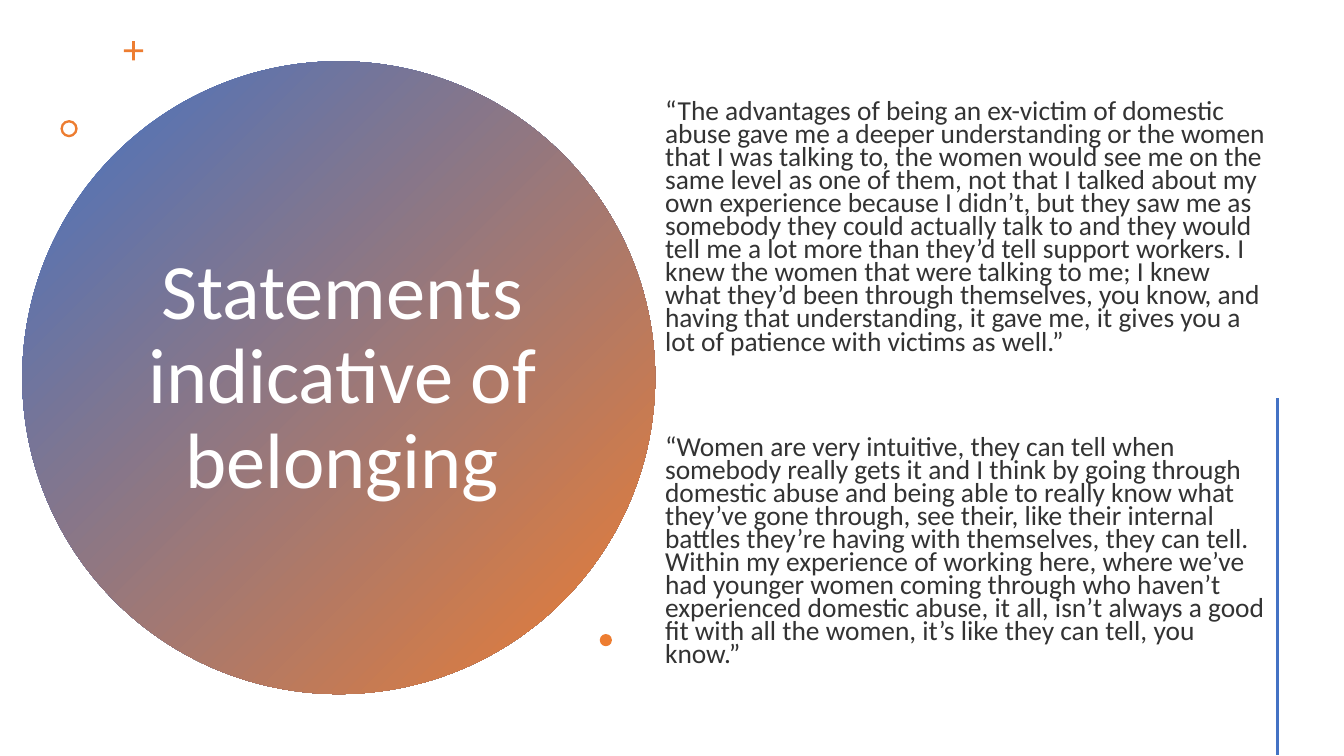
from lxml.etree import SubElement
from pptx import Presentation
from pptx.dml.color import RGBColor
from pptx.enum.shapes import MSO_CONNECTOR as Link, MSO_SHAPE as Kind
from pptx.enum.text import MSO_ANCHOR as Anchor, PP_ALIGN as Align
from pptx.oxml.ns import qn
from pptx.util import Inches, Pt

BLUE = RGBColor(0x44, 0x72, 0xC4)
ORANGE = RGBColor(0xED, 0x7D, 0x31)
WHITE = RGBColor(0xFF, 0xFF, 0xFF)
DARK = RGBColor(0x33, 0x33, 0x33)

COLS = 32

TITLE = "Statements indicative of belonging"
QUOTES = [
    "“The advantages of being an ex-victim of domestic abuse gave me a deeper "
    "understanding or the women that I was talking to, the women would see me "
    "on the same level as one of them, not that I talked about my own "
    "experience because I didn’t, but they saw me as somebody they could "
    "actually talk to and they would tell me a lot more than they’d tell "
    "support workers. I knew the women that were talking to me; I knew what "
    "they’d been through themselves, you know, and having that understanding, "
    "it gave me, it gives you a lot of patience with victims as well.”",
    "“Women are very intuitive, they can tell when somebody really gets it and "
    "I think by going through domestic abuse and being able to really know "
    "what they’ve gone through, see their, like their internal battles they’re "
    "having with themselves, they can tell. Within my experience of working "
    "here, where we’ve had younger women coming through who haven’t "
    "experienced domestic abuse, it all, isn’t always a good fit with all the "
    "women, it’s like they can tell, you know.”",
]


class Canvas:
    font = "Calibri"

    def __init__(self, deck):
        self.cell = deck.slide_width / COLS
        self.shapes = deck.slides.add_slide(deck.slide_layouts[6]).shapes

    def grid(self, *cells):
        return [round(n * self.cell) for n in cells]

    def shape(self, kind, col, row, size, color=ORANGE, adjust=None):
        shape = self.shapes.add_shape(kind, *self.grid(col, row, size, size))
        shape.shadow.inherit = False
        shape.line.fill.background()
        shape.fill.solid()
        shape.fill.fore_color.rgb = color
        if adjust is not None:
            shape.adjustments[0] = adjust
        return shape

    def disc(self, col, row, size, start, end):
        fill = self.shape(Kind.OVAL, col, row, size).fill
        fill.gradient()
        fill.gradient_angle = 315
        for stop, color, place in zip(fill.gradient_stops, (start, end), (0, 1)):
            stop.color.rgb = color
            stop.position = place

    def text(self, box, lines, size, color, pitch, align=Align.LEFT,
             anchor=Anchor.TOP, top=0.12, gap=0):
        frame = self.shapes.add_textbox(*self.grid(*box)).text_frame
        frame.word_wrap = True
        frame.vertical_anchor = anchor
        frame.margin_top, = self.grid(top)
        for i, line in enumerate(lines):
            para = frame.add_paragraph() if i else frame.paragraphs[0]
            para.text = line
            para.alignment = align
            para.line_spacing = pitch
            para.space_before = Pt(gap if i else 0)
            para.font.name = self.font
            para.font.size = Pt(size)
            para.font.color.rgb = color

    def line(self, col, row, end, color, width):
        rule = self.shapes.add_connector(
            Link.STRAIGHT, *self.grid(col, row, col, end))
        rule.line.color.rgb = color
        rule.line.width = Pt(width)
        SubElement(rule._element.spPr, qn("a:effectLst"))


def main():
    deck = Presentation()
    deck.slide_width = Inches(13.33)
    deck.slide_height = Inches(7.5)
    page = Canvas(deck)
    page.disc(0.53, 1.46, 15.07, BLUE, ORANGE)
    page.text((2.02, 3.41, 12.26, 11.21), [TITLE], 56, WHITE, 0.9,
              align=Align.CENTER, anchor=Anchor.MIDDLE)
    page.shape(Kind.CROSS, 2.95, 0.98, 0.46, adjust=0.43)
    page.shape(Kind.DONUT, 1.44, 2.86, 0.41, adjust=0.14)
    page.text((15.6, 1.44, 14.81, 16.54), QUOTES, 19.6, DARK, 0.7,
              top=1, gap=59)
    page.shape(Kind.OVAL, 14.28, 15.1, 0.29)
    page.line(30.41, 9.48, 17.98, BLUE, 2)
    deck.save("out.pptx")


if __name__ == "__main__":
    main()
